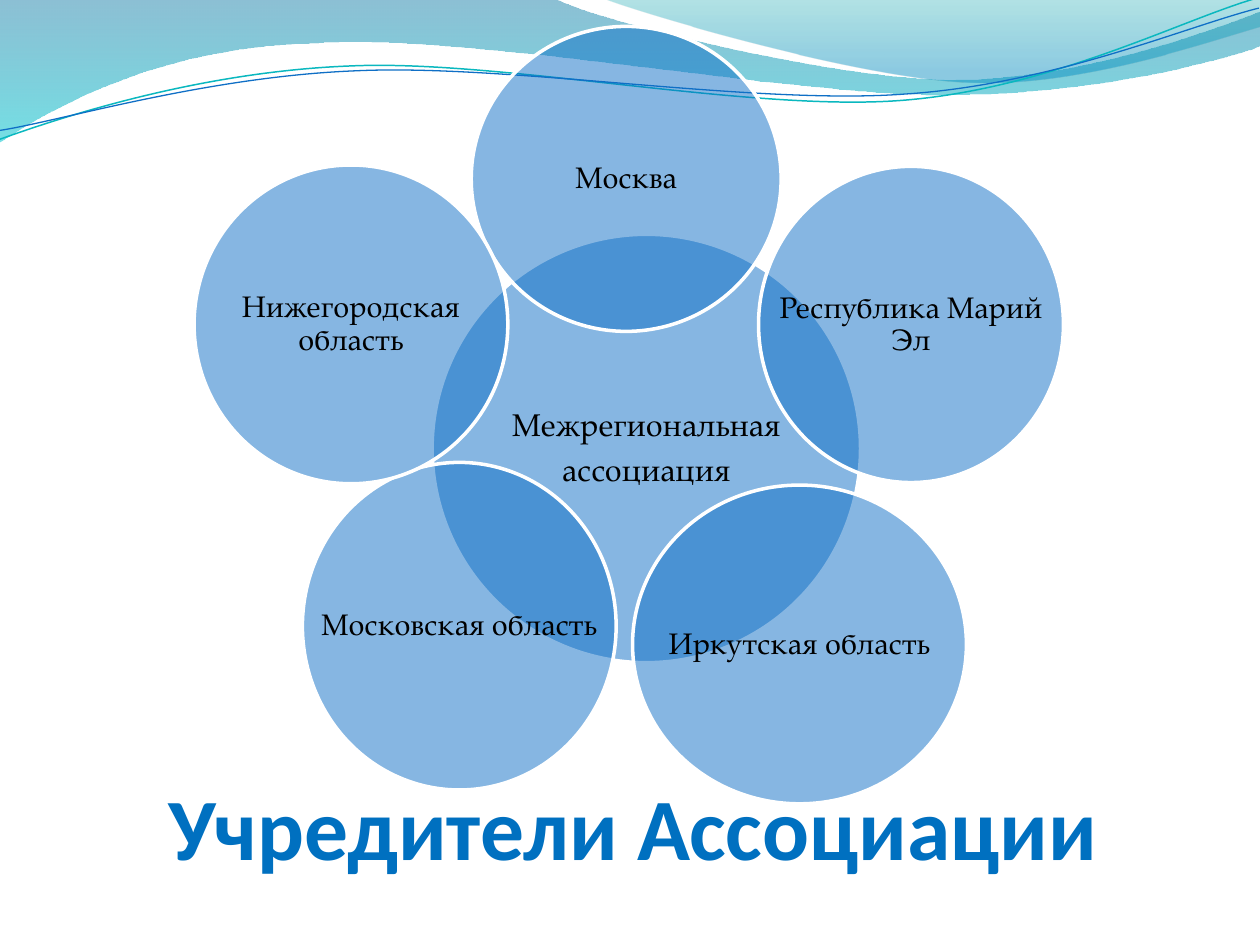
"""Build the slide that shows the founders of the association as circles around it."""
from lxml.etree import SubElement
from pptx import Presentation
from pptx.dml.color import RGBColor
from pptx.enum.shapes import MSO_SHAPE
from pptx.enum.text import MSO_ANCHOR, MSO_AUTO_SIZE, PP_ALIGN
from pptx.oxml.ns import qn
from pptx.util import Inches, Pt

TITLE = "Учредители Ассоциации"
CIRCLES = [
    (["Межрегиональная", "ассоциация"], (3.43, 1.86, 3.4, 3.4), 18),
    (["Москва"], (3.74, 0.21, 2.46, 2.42), 17),
    (["Республика Марий Эл"], (6.02, 1.32, 2.42, 2.51), 17),
    (["Иркутская область"], (5.02, 3.85, 2.65, 2.53), 17),
    (["Московская область"], (2.4, 3.67, 2.49, 2.6), 17),
    (["Нижегородская область"], (1.54, 1.31, 2.49, 2.53), 17),
]
WAVES = [
    ([(0, 0), (4.4, -0.01), (4.76, 0.17, 6.64, 0.63, 7.58, 0.63),
      (8.53, 0.63, 9.58, 0.26, 10, 0.09), (10.01, 0.36),
      (9.83, 0.44, 8.7, 0.76, 7.46, 0.75), (6.22, 0.75, 3.82, 0.28, 2.57, 0.34),
      (1.29, 0.36, 0.46, 0.83, -0.01, 1.13)],
     [(0, "0074A1", 45), (1, "00C6CF", 55)]),
    ([(4.79, -0.01), (5.09, 0.11, 6.82, 0.62, 7.69, 0.65),
      (8.56, 0.69, 9.61, 0.32, 10, 0.21), (10, 0)],
     [(0, "00A1A9", 30), (0.8, "008BBF", 45)]),
]
WAVE_LINES = [
    ([(-0.02, 0.87), (0.47, 0.72, 1.58, 0.41, 2.78, 0.42),
      (3.96, 0.42, 5.91, 0.93, 7.12, 0.9), (8.32, 0.87, 9.4, 0.36, 10, 0.22)],
     "0AB8BF", 0.85),
    ([(-0.02, 0.8), (0.46, 0.75, 1.64, 0.45, 2.83, 0.46),
      (4.03, 0.46, 5.96, 0.88, 7.16, 0.85), (8.35, 0.83, 9.42, 0.42, 10.01, 0.3)],
     "0F6FC6", 0.75),
]
LINE_ROTATION = 357.3


def color(hex_value):
    return RGBColor.from_string(hex_value)


def set_opacity(shape, percents):
    colors = shape._element.spPr.iter(qn("a:srgbClr"))
    for element, percent in zip(list(colors), percents):
        SubElement(element, qn("a:alpha")).set("val", str(percent * 1000))


def set_line(shape, hex_value, width):
    shape.line.color.rgb = color(hex_value)
    shape.line.width = Pt(width)


def bend_segments(shape, segments):
    """Turn each run of three straight steps into one cubic curve."""
    steps = iter(list(shape._element.iter(qn("a:lnTo"))))
    for segment in segments[1:]:
        first = next(steps)
        if len(segment) == 6:
            first.tag = qn("a:cubicBezTo")
            for step in (next(steps), next(steps)):
                first.append(step[0])
                step.getparent().remove(step)


def add_outline(slide, segments, close):
    points = [(Inches(segment[i]), Inches(segment[i + 1]))
              for segment in segments for i in range(0, len(segment), 2)]
    builder = slide.shapes.build_freeform(*points[0])
    builder.add_line_segments(points[1:], close=close)
    shape = builder.convert_to_shape()
    bend_segments(shape, segments)
    shape.shadow.inherit = False
    return shape


def add_wave(slide, segments, stops):
    wave = add_outline(slide, segments, True)
    wave.fill.gradient()
    wave.fill.gradient_angle = 270
    for stop, (position, hex_value, _) in zip(wave.fill.gradient_stops, stops):
        stop.position = position
        stop.color.rgb = color(hex_value)
    set_opacity(wave, [opacity for _, _, opacity in stops])
    wave.line.fill.background()


def add_wave_line(slide, segments, hex_value, width):
    line = add_outline(slide, segments, False)
    line.rotation = LINE_ROTATION
    line.fill.background()
    set_line(line, hex_value, width)


def add_text(paragraph, text, font, size, hex_value, bold=False):
    paragraph.alignment = PP_ALIGN.CENTER
    run = paragraph.add_run()
    run.text = text
    run.font.name, run.font.size, run.font.bold = font, Pt(size), bold
    run.font.color.rgb = color(hex_value)


def set_frame(frame, anchor, side, vertical):
    frame.word_wrap = True
    frame.auto_size = MSO_AUTO_SIZE.NONE
    frame.vertical_anchor = anchor
    frame.margin_left = frame.margin_right = Inches(side)
    frame.margin_top = frame.margin_bottom = Inches(vertical)


def add_circle(slide, lines, box, size):
    bounds = [Inches(value) for value in box]
    circle = slide.shapes.add_shape(MSO_SHAPE.OVAL, *bounds)
    circle.shadow.inherit = False
    circle.fill.solid()
    circle.fill.fore_color.rgb = color("0F6FC6")
    set_opacity(circle, [50])
    set_line(circle, "FFFFFF", 2)
    frame = slide.shapes.add_textbox(*bounds).text_frame
    set_frame(frame, MSO_ANCHOR.MIDDLE, 0.02, 0.02)
    for index, line in enumerate(lines):
        paragraph = frame.add_paragraph() if index else frame.paragraphs[0]
        paragraph.line_spacing = 0.9
        paragraph.space_after = Pt(round(size * 0.35, 1))
        add_text(paragraph, line, "TeX Gyre Pagella", size, "000000")


def add_title(slide):
    title = slide.shapes.title
    title.left, title.top, title.width, title.height = map(Inches, (0.55, 6.03, 8.95, 0.94))
    set_frame(title.text_frame, MSO_ANCHOR.BOTTOM, 0, 0)
    title.text_frame.margin_top = Inches(0.05)
    add_text(title.text_frame.paragraphs[0], TITLE, "Calibri", 50, "0070C0", True)


def main():
    presentation = Presentation()
    presentation.slide_width, presentation.slide_height = Inches(10), Inches(7.5)
    slide = presentation.slides.add_slide(presentation.slide_layouts[5])
    for wave in WAVES:
        add_wave(slide, *wave)
    for wave_line in WAVE_LINES:
        add_wave_line(slide, *wave_line)
    add_title(slide)
    for circle in CIRCLES:
        add_circle(slide, *circle)
    presentation.save("out.pptx")


if __name__ == "__main__":
    main()
